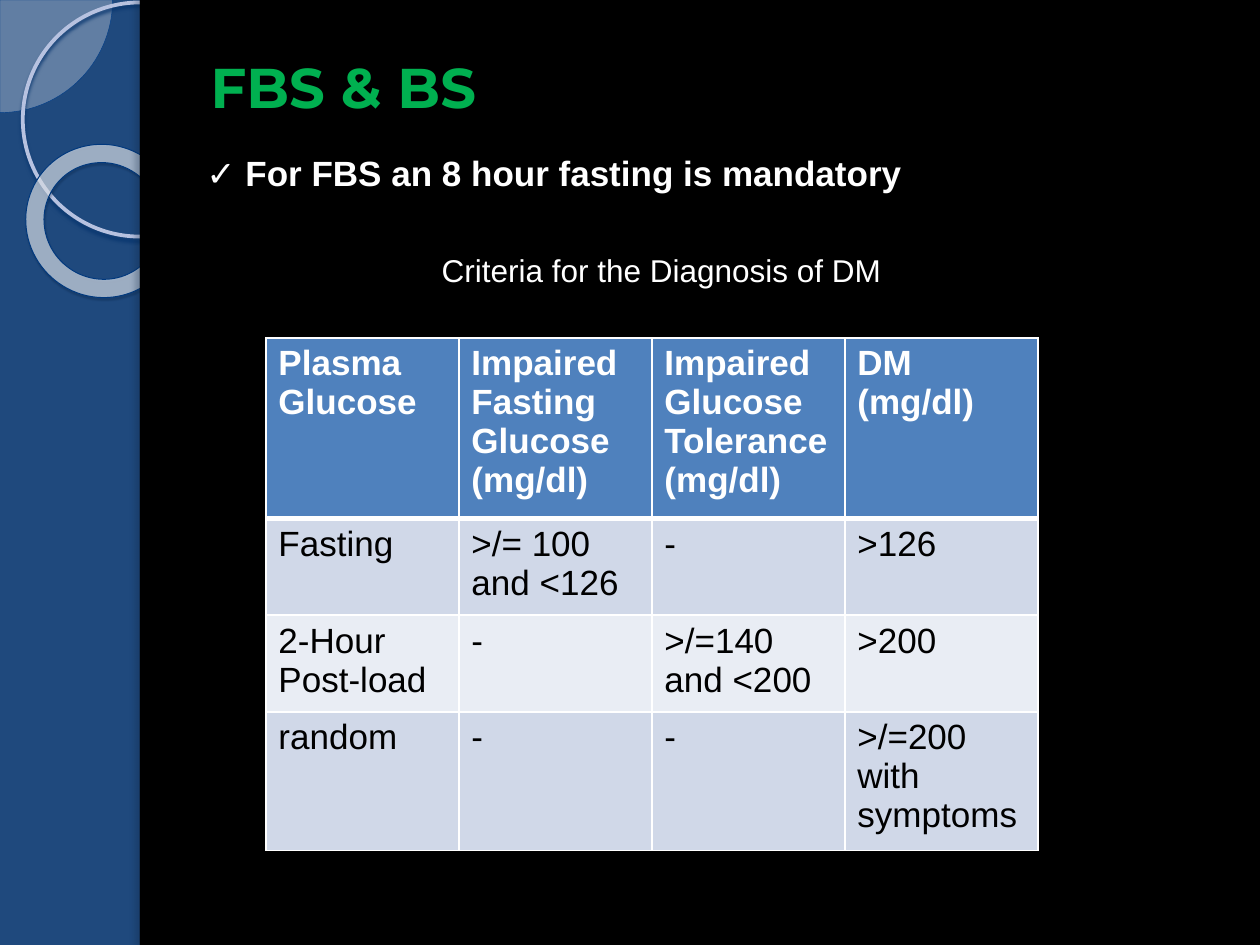
from dataclasses import dataclass
from typing import Optional

from lxml.etree import SubElement
from pptx import Presentation
from pptx.dml.color import RGBColor
from pptx.enum.shapes import MSO_SHAPE as Preset
from pptx.enum.text import MSO_ANCHOR as Anchor, PP_ALIGN as Align
from pptx.oxml.ns import qn
from pptx.util import Cm, Pt

WHITE, BLACK, NAVY, GREEN = "FFFFFF", "000000", "1F497D", "00B050"
HEADER_BLUE, BANDS = "4F81BD", ("D0D8E8", "E9EDF4")

CRITERIA = [
    ("Plasma Glucose", "Impaired Fasting Glucose (mg/dl)",
     "Impaired Glucose Tolerance (mg/dl)", "DM (mg/dl)"),
    ("Fasting", ">/= 100 and <126", "-", ">126"),
    ("2-Hour Post-load", "-", ">/=140 and <200", ">200"),
    ("random", "-", "-", ">/=200 with symptoms"),
]
ROW_HEIGHTS = (3.4, 1.83, 1.83, 2.62)
COLUMN_WIDTH = 3.89


@dataclass
class Shadow:
    color: str
    opacity: int
    blur: float
    distance: float
    angle: int


@dataclass
class Ornament:
    """A decorative shape; box is left, top, width, height in cm."""
    preset: Preset
    box: tuple
    fill: Optional[str] = None
    opacity: int = 100
    line: Optional[str] = None
    line_width: float = 0
    adjustments: tuple = ()
    rotation: float = 0
    shadow: Optional[Shadow] = None


ORNAMENTS = [
    Ornament(Preset.PIE, (-2.27, -2.27, 4.54, 4.54), "E8EAF1", 33,
             "003C86", 0.25, adjustments=(0, 54)),
    Ornament(Preset.OVAL, (0.46, 0.05, 4.72, 4.72), line="B7C2E0", line_width=2.15,
             shadow=Shadow("06346E", 85, 2, 2, 90)),
    Ornament(Preset.DONUT, (0.51, 2.92, 3.12, 3.07), "F5F7FA", 60, "00387D", 0.58,
             (0.12,), 38.6, Shadow("001A39", 35, 1, 1.2, 75)),
    Ornament(Preset.RECTANGLE, (2.82, 0, 22.58, 19.05), BLACK),
    Ornament(Preset.RECTANGLE, (2.82, 0, 0.2, 19.05), BLACK,
             shadow=Shadow("0D2440", 25, 3, 3, 180)),
]


def paint(color_format, color: str, opacity: int = 100) -> None:
    color_format.rgb = RGBColor.from_string(color)
    if opacity < 100:
        rgb = color_format._xFill.find(qn("a:srgbClr"))
        SubElement(rgb, qn("a:alpha"), val=str(opacity * 1000))


def fill_solid(fill, color: str, opacity: int = 100) -> None:
    fill.solid()
    paint(fill.fore_color, color)
    if opacity < 100:
        rgb = fill._xPr.find(qn("a:solidFill")).find(qn("a:srgbClr"))
        SubElement(rgb, qn("a:alpha"), val=str(opacity * 1000))


def add_shadow(shape, shadow: Shadow) -> None:
    effects = shape._element.spPr.find(qn("a:effectLst"))
    outer = SubElement(effects, qn("a:outerShdw"), blurRad=str(Pt(shadow.blur)),
                       dist=str(Pt(shadow.distance)), dir=str(shadow.angle * 60000),
                       algn="tl", rotWithShape="0")
    rgb = SubElement(outer, qn("a:srgbClr"), val=shadow.color)
    SubElement(rgb, qn("a:alpha"), val=str(shadow.opacity * 1000))


def draw_ornament(slide, ornament: Ornament) -> None:
    shape = slide.shapes.add_shape(ornament.preset, *map(Cm, ornament.box))
    shape.shadow.inherit = False
    shape.rotation = ornament.rotation
    for index, value in enumerate(ornament.adjustments):
        shape.adjustments[index] = value
    if ornament.fill:
        fill_solid(shape.fill, ornament.fill, ornament.opacity)
    else:
        shape.fill.background()
    if ornament.line:
        fill_solid(shape.line.fill, ornament.line)
        shape.line.width = Pt(ornament.line_width)
    else:
        shape.line.fill.background()
    if ornament.shadow:
        add_shadow(shape, ornament.shadow)


def write(frame, text: str, *, size: float, color: str = WHITE, font: str = "Arial",
          bold: bool = False, align: Align = Align.LEFT) -> None:
    frame.word_wrap = True
    paragraph = frame.paragraphs[0]
    paragraph.alignment = align
    run = paragraph.add_run()
    run.text = text
    run.font.name, run.font.size, run.font.bold = font, Pt(size), bold
    paint(run.font.color, color)


def add_borders(cell, bottom: float, top: float) -> None:
    properties = cell._tc.get_or_add_tcPr()
    for side, width in (("L", 1), ("R", 1), ("T", top), ("B", bottom)):
        line = SubElement(properties, qn(f"a:ln{side}"), w=str(Pt(width)))
        SubElement(SubElement(line, qn("a:solidFill")), qn("a:srgbClr"), val=WHITE)


def draw_criteria(slide, left: float, top: float) -> None:
    rows, columns = len(CRITERIA), len(CRITERIA[0])
    table = slide.shapes.add_table(rows, columns, Cm(left), Cm(top),
                                   Cm(COLUMN_WIDTH * columns), Cm(sum(ROW_HEIGHTS))).table
    for column in table.columns:
        column.width = Cm(COLUMN_WIDTH)
    for r, (values, height) in enumerate(zip(CRITERIA, ROW_HEIGHTS)):
        table.rows[r].height = Cm(height)
        header = r == 0
        for c, value in enumerate(values):
            cell = table.cell(r, c)
            add_borders(cell, bottom=3 if header else 1, top=3 if r == 1 else 1)
            fill_solid(cell.fill, HEADER_BLUE if header else BANDS[(r - 1) % 2])
            write(cell.text_frame, value, size=20, bold=header,
                  color=WHITE if header else BLACK)


def main() -> None:
    deck = Presentation()
    deck.slide_width, deck.slide_height = Cm(25.4), Cm(19.05)
    slide = deck.slides.add_slide(deck.slide_layouts[5])
    fill_solid(slide.background.fill, NAVY)

    # Side band and content panel
    for ornament in ORNAMENTS:
        draw_ornament(slide, ornament)

    # Title, brought in front of the panel
    title = slide.shapes.title
    title.left, title.top, title.width, title.height = map(Cm, (3.99, 0.76, 20.83, 1.95))
    title.text_frame.vertical_anchor = Anchor.MIDDLE
    write(title.text_frame, "FBS & BS", size=32, color=GREEN, font="Montserrat", bold=True)
    slide.shapes._spTree.append(title._element)

    # Fasting note and table caption
    note = slide.shapes.add_textbox(Cm(3.91), Cm(2.92), Cm(17.07), Cm(1.12))
    write(note.text_frame, "✓ For FBS an 8 hour fasting is mandatory", size=20, bold=True)
    caption = slide.shapes.add_textbox(Cm(4.9), Cm(4.93), Cm(16.87), Cm(1.02))
    write(caption.text_frame, "Criteria for the Diagnosis of DM", size=18,
          align=Align.CENTER)

    # Diagnosis table
    draw_criteria(slide, 5.36, 6.81)
    deck.save("out.pptx")


if __name__ == "__main__":
    main()
